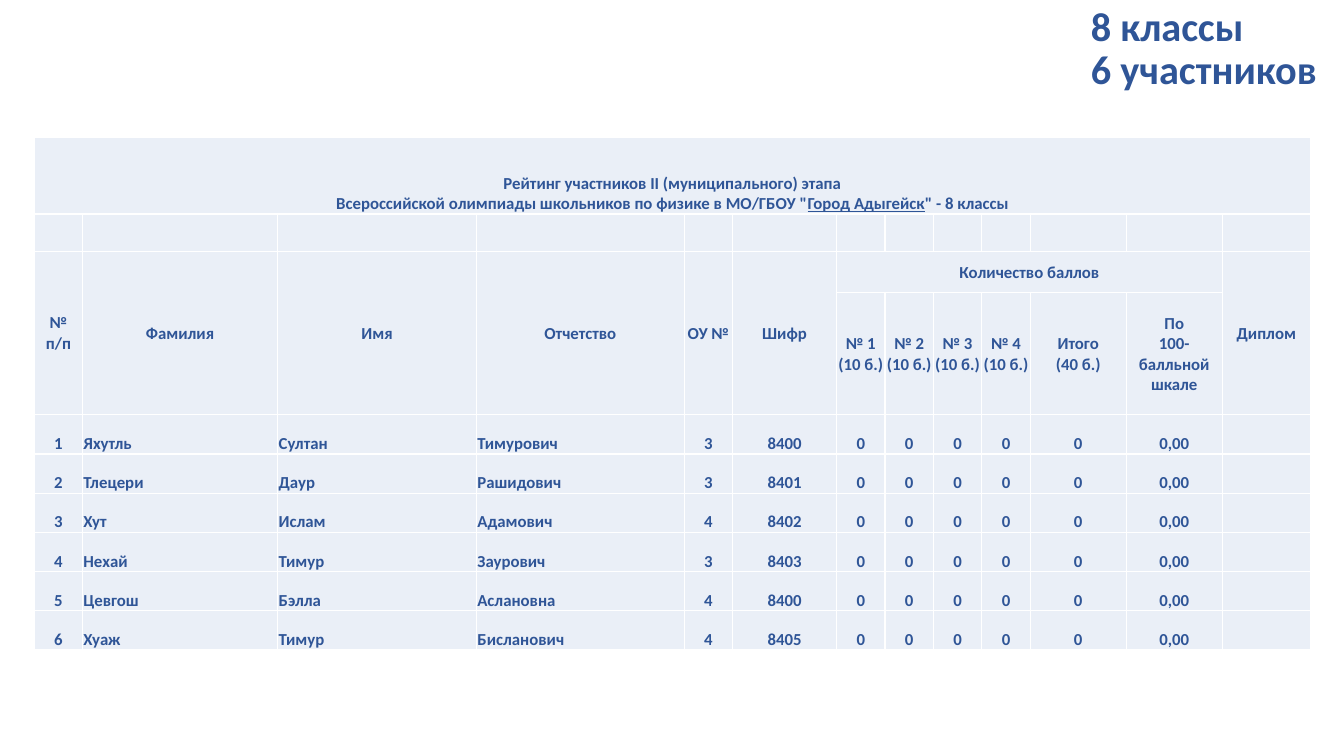
import copy
import pptx
import pptx.util
import pptx.dml.color
import pptx.enum.text
import pptx.oxml
import pptx.oxml.ns

Pt = pptx.util.Pt
RGB = pptx.dml.color.RGBColor
Align = pptx.enum.text.PP_ALIGN
Anchor = pptx.enum.text.MSO_ANCHOR
qn = pptx.oxml.ns.qn

# Content (\v is a line break within a paragraph)
TITLE = "8 классы\v6 участников"
HEAD = ("Рейтинг участников II (муниципального) этапа\v"
        "Всероссийской олимпиады школьников по физике в МО/ГБОУ \"",
        "Город Адыгейск", "\" - 8 классы")
LABELS = ["№\vп/п", "Фамилия", "Имя", "Отчетство", "ОУ №", "Шифр",
          "№ 1\v(10 б.)", "№ 2\v(10 б.)", "№ 3\v(10 б.)", "№ 4\v(10 б.)",
          "Итого\v(40 б.)", "По\v100-балльной\vшкале", "Диплом"]
GROUP = "Количество баллов"
PUPILS = [
    ("Яхутль", "Султан", "Тимурович", 3, 8400),
    ("Тлецери", "Даур", "Рашидович", 3, 8401),
    ("Хут", "Ислам", "Адамович", 4, 8402),
    ("Нехай", "Тимур", "Заурович", 3, 8403),
    ("Цевгош", "Бэлла", "Аслановна", 4, 8400),
    ("Хуаж", "Тимур", "Бисланович", 4, 8405),
]
SCORES = ["0"] * 5 + ["0,00", ""]

# Format
BLUE = RGB(0x2F, 0x55, 0x97)
PALE = RGB(0xEA, 0xEF, 0xF7)
WHITE = RGB(0xFF, 0xFF, 0xFF)
FONT = {"name": "Calibri", "bold": True}
INSET = {"margin_left": Pt(0.7), "margin_right": Pt(0.7),
         "margin_top": Pt(0.7), "margin_bottom": 0}
WIDTHS = [34.3, 139.5, 142, 148.3, 34.6, 74.3] + [34.6] * 4 + [68.6, 68.6, 63]
HEIGHTS = [54.6, 26.5, 29.7, 87.3] + [28] * len(PUPILS)
FIRST, LAST = 6, 11  # score columns
TOP, SUB, BODY = 2, 3, 4  # label rows and first pupil row


def apply(item, values):
    for key, value in values.items():
        setattr(item, key, value)


def style(para, size):
    for run in para.runs:
        apply(run.font, {**FONT, "size": Pt(size)})
        run.font.color.rgb = BLUE
    for gap in para._p.findall(qn("a:br")):
        gap.append(copy.deepcopy(para.runs[0]._r.rPr))


def border(cell):
    props = cell._tc.get_or_add_tcPr()
    for spot, side in enumerate("LRTB"):
        line = pptx.oxml.parse_xml(
            f'<a:ln{side} {pptx.oxml.ns.nsdecls("a")} w="{Pt(1)}">'
            f'<a:solidFill><a:srgbClr val="{WHITE}"/></a:solidFill></a:ln{side}>')
        props.insert(spot, line)


def write(row, col, text, anchor=Anchor.MIDDLE, align=Align.CENTER):
    cell = table.cell(row, col)
    cell.vertical_anchor = anchor
    para = cell.text_frame.paragraphs[0]
    para.text = text
    para.alignment = align
    style(para, 12)
    return para


deck = pptx.Presentation()
deck.slide_width, deck.slide_height = Pt(960), Pt(540)
slide = deck.slides.add_slide(deck.slide_layouts[5])

# Title
title = slide.shapes.title
apply(title, {"left": Pt(772), "top": 0, "width": Pt(188), "height": Pt(71.3)})
apply(title.text_frame, {"word_wrap": True, "vertical_anchor": Anchor.MIDDLE,
                         "auto_size": pptx.enum.text.MSO_AUTO_SIZE.NONE})
para = title.text_frame.paragraphs[0]
para.text = TITLE
apply(para, {"alignment": Align.LEFT, "line_spacing": 0.9})
style(para, 28.8)

# Table grid
table = slide.shapes.add_table(len(HEIGHTS), len(WIDTHS), Pt(24.6), Pt(98.3),
                               Pt(sum(WIDTHS)), Pt(sum(HEIGHTS))).table
apply(table, {"first_row": False, "horz_banding": False})
for column, width in zip(table.columns, WIDTHS):
    column.width = Pt(width)
for row, height in zip(table.rows, HEIGHTS):
    row.height = Pt(height)
for cell in table.iter_cells():
    apply(cell, INSET)
    cell.fill.solid()
    cell.fill.fore_color.rgb = PALE
    border(cell)

# Heading with the underlined town
table.cell(0, 0).merge(table.cell(0, len(WIDTHS) - 1))
para = write(0, 0, HEAD[0], Anchor.BOTTOM)
for text in HEAD[1:]:
    para.add_run().text = text
for run in para.runs[-2:]:
    apply(run.font, {**FONT, "size": Pt(12), "underline": run.text == HEAD[1]})
    run.font.color.rgb = BLUE

# Column labels
table.cell(TOP, FIRST).merge(table.cell(TOP, LAST))
write(TOP, FIRST, GROUP)
for col, label in enumerate(LABELS):
    if FIRST <= col <= LAST:
        write(SUB, col, label)
    else:
        table.cell(TOP, col).merge(table.cell(SUB, col))
        write(TOP, col, label)

# Pupils
for num, pupil in enumerate(PUPILS):
    for col, value in enumerate([num + 1, *pupil, *SCORES]):
        if value != "":
            align = Align.LEFT if 1 <= col <= 3 else Align.CENTER
            write(BODY + num, col, str(value), Anchor.BOTTOM, align)

deck.save("out.pptx")
